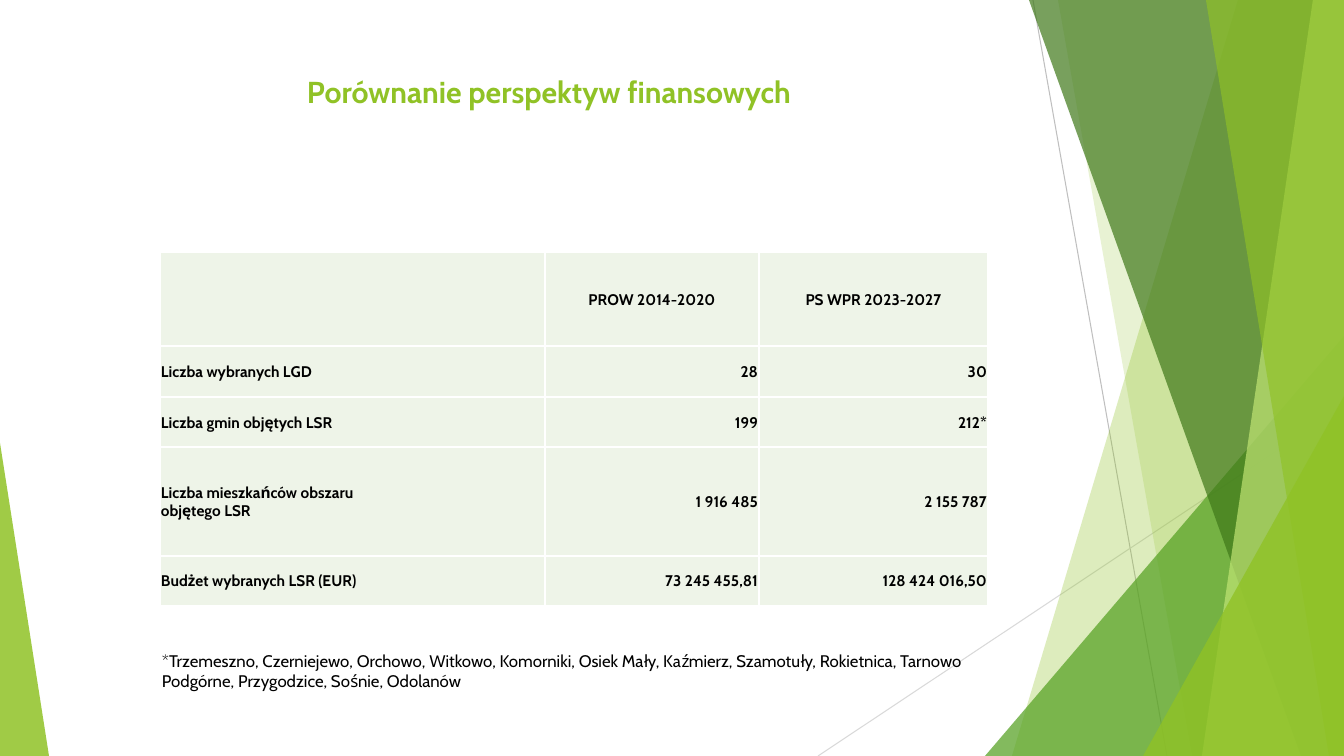
from dataclasses import dataclass

from pptx import Presentation
from pptx.dml.color import RGBColor
from pptx.enum.shapes import MSO_CONNECTOR as Connector, MSO_SHAPE as Shape
from pptx.enum.text import MSO_ANCHOR as Anchor, PP_ALIGN as Align
from pptx.oxml import parse_xml
from pptx.oxml.ns import nsdecls, qn
from pptx.oxml.xmlchemy import OxmlElement
from pptx.util import Pt

PX = 9072
WIDTH, HEIGHT = 1344, 756


@dataclass(frozen=True)
class Theme:
    font: str = "Cabin"
    lime: str = "90C226"
    green: str = "54A021"
    forest: str = "3F7819"
    pale: str = "C0E474"
    cell: str = "EEF4E8"
    border: str = "FFFFFF"
    text: str = "000000"
    ray_dark: str = "BFBFBF"
    ray_light: str = "D9D9D9"
    title_size: float = 21.6
    table_size: float = 11
    note_size: float = 12


THEME = Theme()

RAYS = [
    ((1033, 0), (1167, HEIGHT), THEME.ray_dark),
    ((WIDTH, 406), (818, HEIGHT), THEME.ray_light),
]
BACK_BANDS = [(1238, 1012, THEME.lime, 30), (1058, 1192, THEME.lime, 20)]
FRONT_BANDS = [
    (1029, 1301, THEME.forest, 70),
    (1313, 1202, THEME.pale, 70),
    (1206, 1329, THEME.lime, 65),
]
BACK_TRIANGLE = (985, 336, 359, 1, THEME.green, 72)
FRONT_TRIANGLES = [
    (1143, 396, 201, 1, THEME.lime, 80),
    (0, 443, 49, 0, THEME.lime, 85),
]

COLUMNS = [385, 214, 229]
ROWS = [94, 51, 50, 109, 50]
COMPARISON = [
    ["", "PROW 2014-2020", "PS WPR 2023-2027"],
    ["Liczba wybranych LGD", "28", "30"],
    ["Liczba gmin objętych LSR", "199", "212*"],
    ["Liczba mieszkańców obszaru\nobjętego LSR", "1 916 485", "2 155 787"],
    ["Budżet wybranych LSR (EUR)", "73 245 455,81", "128 424 016,50"],
]
NOTE = [
    "*Trzemeszno, Czerniejewo, Orchowo, Witkowo, Komorniki, Osiek Mały, "
    "Kaźmierz, Szamotuły, Rokietnica, Tarnowo",
    "Podgórne, Przygodzice, Sośnie, Odolanów",
]


def px(*lengths):
    return [n * PX for n in lengths]


def rgb(color):
    return RGBColor.from_string(color)


def write(tf, paragraphs, *, size, color=THEME.text, bold=False, align=Align.LEFT):
    for i, text in enumerate(paragraphs):
        p = tf.add_paragraph() if i else tf.paragraphs[0]
        p.text = text
        p.alignment = align
        for r in p.runs:
            r.font.name = THEME.font
            r.font.size = Pt(size)
            r.font.bold = bold
            r.font.color.rgb = rgb(color)


def paint(sp, color, opacity):
    sp.shadow.inherit = False
    sp.fill.solid()
    sp.fill.fore_color.rgb = rgb(color)
    sp.line.fill.background()
    alpha = OxmlElement("a:alpha")
    alpha.set("val", str(opacity * 1000))
    next(sp._element.spPr.iter(qn("a:srgbClr"))).append(alpha)


def add_ray(s, start, end, color):
    ray = s.shapes.add_connector(Connector.STRAIGHT, *px(*start, *end))
    ray.line.color.rgb = rgb(color)
    ray.line.width = Pt(0.75)
    ray._element.spPr.append(OxmlElement("a:effectLst"))


def add_band(s, top, bottom, color, opacity):
    builder = s.shapes.build_freeform(top, 0, scale=PX)
    builder.add_line_segments([(WIDTH, 0), (WIDTH, HEIGHT), (bottom, HEIGHT)])
    paint(builder.convert_to_shape(), color, opacity)


def add_triangle(s, left, top, width, apex, color, opacity):
    sp = s.shapes.add_shape(
        Shape.ISOSCELES_TRIANGLE, *px(left, top, width, HEIGHT - top)
    )
    sp.adjustments[0] = apex
    paint(sp, color, opacity)


def add_decoration(s):
    for ray in RAYS:
        add_ray(s, *ray)
    for band in BACK_BANDS:
        add_band(s, *band)
    add_triangle(s, *BACK_TRIANGLE)
    for band in FRONT_BANDS:
        add_band(s, *band)
    for triangle in FRONT_TRIANGLES:
        add_triangle(s, *triangle)


def set_title(s, text):
    title = s.shapes.title
    title.left, title.top, title.width, title.height = px(75, 68, 948, 145)
    title.text_frame.vertical_anchor = Anchor.TOP
    write(title.text_frame, [text], size=THEME.title_size, color=THEME.lime,
          bold=True, align=Align.CENTER)


def format_cell(cell):
    cell.vertical_anchor = Anchor.MIDDLE
    cell.margin_left = cell.margin_right = cell.margin_top = PX
    cell.margin_bottom = 0
    cell.fill.solid()
    cell.fill.fore_color.rgb = rgb(THEME.cell)
    props = cell._tc.get_or_add_tcPr()
    for i, side in enumerate(("lnL", "lnR", "lnT", "lnB")):
        props.insert(i, parse_xml(
            f'<a:{side} {nsdecls("a")} w="{Pt(1)}"><a:solidFill>'
            f'<a:srgbClr val="{THEME.border}"/></a:solidFill></a:{side}>'
        ))


def add_comparison(s):
    frame = s.shapes.add_table(
        len(ROWS), len(COLUMNS), *px(160, 252, sum(COLUMNS), sum(ROWS))
    )
    table = frame.table
    for column, width in zip(table.columns, COLUMNS):
        column.width = width * PX
    for row, height in zip(table.rows, ROWS):
        row.height = height * PX
    for i, values in enumerate(COMPARISON):
        for j, value in enumerate(values):
            cell = table.cell(i, j)
            format_cell(cell)
            align = Align.CENTER if i == 0 else Align.RIGHT if j else Align.LEFT
            write(cell.text_frame, [value], size=THEME.table_size, bold=True,
                  align=align)


def add_note(s):
    tf = s.shapes.add_textbox(*px(152, 646, 888, 50)).text_frame
    tf.word_wrap = True
    write(tf, NOTE, size=THEME.note_size)


def main():
    prs = Presentation()
    prs.slide_width, prs.slide_height = px(WIDTH, HEIGHT)
    s = prs.slides.add_slide(prs.slide_layouts[5])
    add_decoration(s)
    set_title(s, "Porównanie perspektyw finansowych")
    add_comparison(s)
    add_note(s)
    prs.save("out.pptx")


if __name__ == "__main__":
    main()
